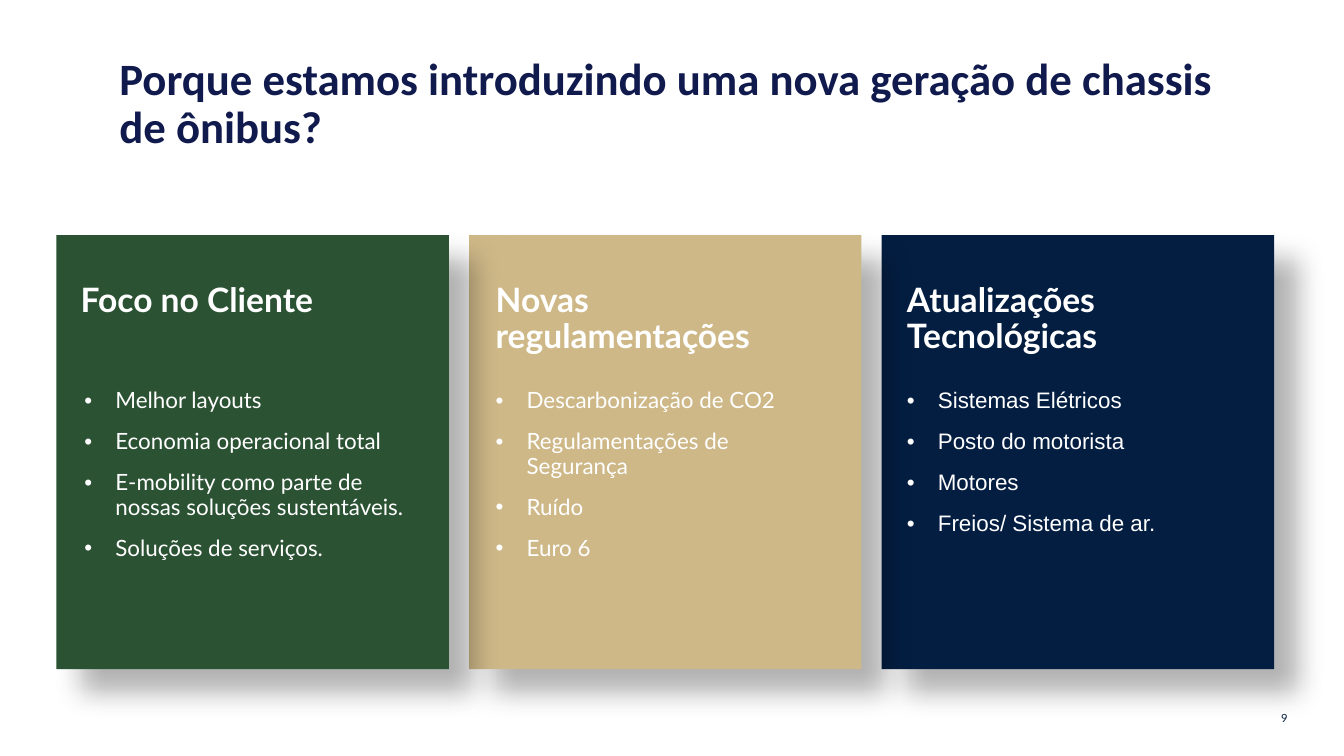
from dataclasses import dataclass

from lxml.etree import SubElement
from pptx import Presentation
from pptx.dml.color import RGBColor as RGB
from pptx.enum.shapes import MSO_SHAPE as Shape
from pptx.enum.text import MSO_ANCHOR as Anchor, MSO_AUTO_SIZE as Fit, PP_ALIGN as Align
from pptx.oxml import parse_xml
from pptx.oxml.ns import nsdecls, qn
from pptx.util import Inches, Pt


@dataclass
class Theme:
    navy: str = "041E42"
    sand: str = "CEB888"
    green: str = "2C5234"
    title: str = "101A4D"
    white: str = "FFFFFF"
    title_size: int = 24
    head_size: int = 18
    body_size: int = 12
    page_size: int = 6


theme = Theme()

SHADOW = f"""<a:effectLst {nsdecls('a')}>
  <a:outerShdw blurRad="{Pt(15)}" dist="{Pt(18)}" dir="2700000" algn="tl" rotWithShape="0">
    <a:srgbClr val="000000"><a:alpha val="30000"/></a:srgbClr>
  </a:outerShdw>
</a:effectLst>"""


def add_text(s, box, lines, font, size, color, bold=False, bullets=False, spacing=0.9):
    """Add a wrapped text box, one paragraph per line."""
    tf = s.shapes.add_textbox(*map(Inches, box)).text_frame
    tf.word_wrap = True
    tf.text = "\n".join(lines)
    for i, p in enumerate(tf.paragraphs):
        p.line_spacing = spacing
        if i:
            p.space_before = Pt(9)
        if bullets:
            pPr = p._p.get_or_add_pPr()
            pPr.set("marL", str(Inches(0.23)))
            pPr.set("indent", str(-Inches(0.23)))
            SubElement(pPr, qn("a:buFont")).set("typeface", "Arial")
            SubElement(pPr, qn("a:buChar")).set("char", "•")
        for r in p.runs:
            r.font.name, r.font.size, r.font.bold = font, Pt(size), bold
            r.font.color.rgb = RGB.from_string(color)
    return tf


# Widescreen slide, 16:9
prs = Presentation()
W = 10
H = W * 9 / 16
prs.slide_width, prs.slide_height = Inches(W), Inches(H)
s = prs.slides.add_slide(prs.slide_layouts[6])

# Grid: three equal columns of panels, with a text column on each
left, top, pitch = 0.42, 1.75, 3.07
card_w, card_h = 2.92, 3.23
text_left, text_pitch, text_w = 0.53, 3.06, 2.69
head_y, body_y = top + 0.32, top + 1.1

# Fill, heading, heading height, heading left inset, body font, bullets
cards = [
    (theme.green, "Foco no Cliente", 0.35, 0.07, "Lato",
     ["Melhor layouts", "Economia operacional total",
      "E-mobility como parte de nossas soluções sustentáveis.", "Soluções de serviços."]),
    (theme.sand, "Novas regulamentações", 0.65, 0.1, "Lato",
     ["Descarbonização de CO2", "Regulamentações de Segurança", "Ruído", "Euro 6"]),
    (theme.navy, "Atualizações Tecnológicas", 0.65, 0.1, "Arial",
     ["Sistemas Elétricos", "Posto do motorista", "Motores", "Freios/ Sistema de ar."]),
]

# Card panels, right to left so that each shadow falls on the next panel
for i, (fill, *_) in reversed(list(enumerate(cards))):
    box = (left + i * pitch, top, card_w, card_h)
    sp = s.shapes.add_shape(Shape.RECTANGLE, *map(Inches, box))
    sp.fill.solid()
    sp.fill.fore_color.rgb = RGB.from_string(fill)
    sp.line.fill.background()
    sp._element.spPr.append(parse_xml(SHADOW))

# Card headings and bullets
for i, (_, heading, head_h, inset, font, items) in enumerate(cards):
    x = text_left + i * text_pitch
    tf = add_text(s, (x, head_y, text_w, head_h), [heading],
                  "Lato", theme.head_size, theme.white, bold=True)
    tf.margin_left = Inches(inset)
    tf.margin_top = tf.margin_bottom = Inches(0.04)
    tf.auto_size = Fit.SHAPE_TO_FIT_TEXT
    tf = add_text(s, (x, body_y, text_w, 1.57), items,
                  font, theme.body_size, theme.white, bullets=True)
    tf.auto_size = Fit.SHAPE_TO_FIT_TEXT

# Title
tf = add_text(s, (0.79, 0.32, 8.43, 0.63),
              ["Porque estamos introduzindo uma nova geração de chassis de ônibus?"],
              "Calibri", theme.title_size, theme.title, bold=True)
tf.margin_left = tf.margin_right = tf.margin_top = tf.margin_bottom = Inches(0.1)

# Page number
tf = add_text(s, (9.16, 5.25, 0.42, 0.18), ["9"], "Lato", theme.page_size, theme.navy, spacing=1.0)
tf.margin_left = tf.margin_right = tf.margin_top = tf.margin_bottom = 0
tf.vertical_anchor = Anchor.MIDDLE
tf.paragraphs[0].alignment = Align.RIGHT

prs.save("out.pptx")
